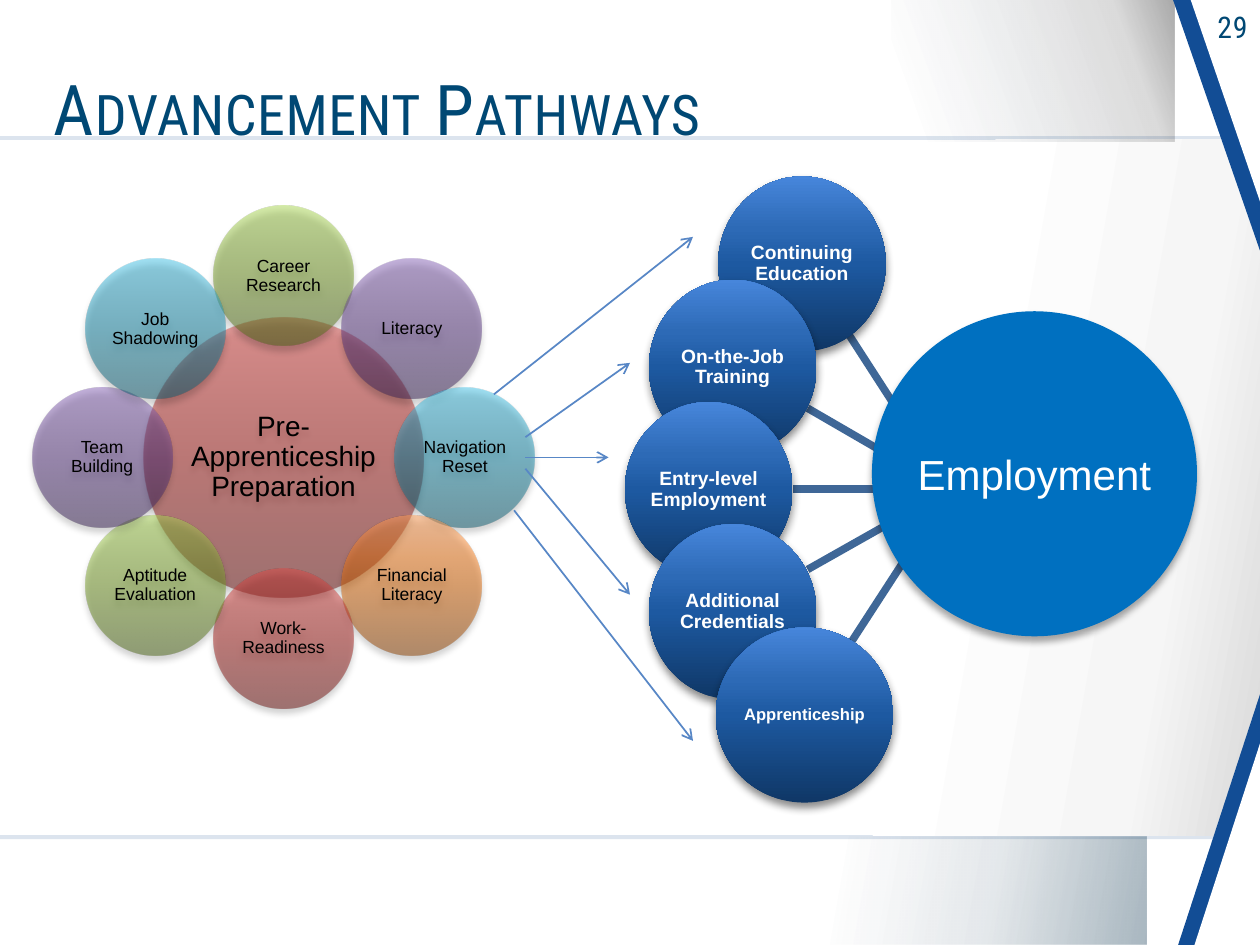
import math
from dataclasses import dataclass

import pptx
import pptx.dml.color
import pptx.enum.shapes
import pptx.enum.text
import pptx.oxml.ns
import pptx.util
from lxml import etree

Inches = pptx.util.Inches
Pt = pptx.util.Pt
qn = pptx.oxml.ns.qn
SHAPES = pptx.enum.shapes.MSO_SHAPE
ALIGN = pptx.enum.text.PP_ALIGN
ANCHOR = pptx.enum.text.MSO_ANCHOR

COLOURS = {
    "navy": "004874", "edge": "124D95", "rule": "275A99", "white": "FFFFFF",
    "black": "000000", "pale": "F6F6F6", "grey": "D9D9D9", "deep": "002C47",
    "spoke": "3F6797", "arrow": "5887C6", "employment": "0070C0",
}
RAMPS = {
    "red": ("68100E", "A41E1A", "B92E2A", "DF4845"),
    "green": ("4A6316", "769C27", "89B137", "A9D651"),
    "purple": ("372152", "593782", "6A4895", "8763B7"),
    "teal": ("0B586C", "178BAA", "279FC0", "41C1E6"),
    "orange": ("8B3F00", "DA6606", "F47917", "FF9C54"),
    "blue": ("0F3766", "1D59A1", "2D6AB6", "4786DB"),
}
RAMP_POSITIONS = (0, 50, 70, 100)


@dataclass
class Stop:
    position: float
    colour: str
    alpha: float = 100


@dataclass
class Box:
    left: float
    top: float
    width: float
    height: float

    def lengths(self) -> list:
        return [Inches(n) for n in (self.left, self.top, self.width, self.height)]


@dataclass
class Pathway:
    label: str
    box: Box
    spoke: tuple
    arrow: tuple
    size: float = 11


SATELLITES = [
    ("Career Research", "green"), ("Literacy", "purple"),
    ("Navigation Reset", "teal"), ("Financial Literacy", "orange"),
    ("Work-Readiness", "red"), ("Aptitude Evaluation", "green"),
    ("Team Building", "purple"), ("Job Shadowing", "teal"),
]
PATHWAYS = [
    Pathway("Continuing Education", Box(5.7, 1.4, 1.33, 1.39),
            (7.25, 3.45, 6.74, 2.66), (3.92, 3.13, 5.5, 1.88)),
    Pathway("On-the-Job Training", Box(5.15, 2.22, 1.33, 1.39),
            (7.1, 3.64, 6.41, 3.24), (4.17, 3.47, 5, 2.88)),
    Pathway("Entry-level Employment", Box(4.96, 3.19, 1.33, 1.39),
            (7.1, 3.88, 6.29, 3.88), (4.17, 3.63, 4.83, 3.63)),
    Pathway("Additional Credentials", Box(5.15, 4.16, 1.33, 1.39),
            (7.1, 4.13, 6.41, 4.52), (4.17, 3.72, 5, 4.72)),
    Pathway("Apprenticeship", Box(5.68, 4.98, 1.41, 1.39),
            (7.26, 4.32, 6.76, 5.09), (4.08, 4.05, 5.5, 5.88), 9.5),
]


def rgb(value: str):
    return pptx.dml.color.RGBColor.from_string(value)


def add_colour(parent, value: str, alpha: float) -> None:
    colour = etree.SubElement(parent, qn("a:srgbClr"), val=value)
    if alpha < 100:
        etree.SubElement(colour, qn("a:alpha"), val=str(round(alpha * 1000)))


def ramp(name: str, alpha: float = 100) -> list:
    return [Stop(place, colour, alpha) for place, colour in zip(RAMP_POSITIONS, RAMPS[name])]


def add_form(page, kind, box: Box, stops: list, angle: float = 270):
    form = page.shapes.add_shape(kind, *box.lengths())
    form.shadow.inherit = False
    form.line.fill.background()
    if len(stops) == 1:
        form.fill.solid()
        fill = form.element.spPr.find(qn("a:solidFill"))
        fill.clear()
        add_colour(fill, stops[0].colour, stops[0].alpha)
        return form
    form.fill.gradient()
    fill = form.element.spPr.find(qn("a:gradFill"))
    fill.clear()
    stop_list = etree.SubElement(fill, qn("a:gsLst"))
    for stop in stops:
        entry = etree.SubElement(stop_list, qn("a:gs"), pos=str(round(stop.position * 1000)))
        add_colour(entry, stop.colour, stop.alpha)
    etree.SubElement(fill, qn("a:lin"), ang=str(round(angle * 60000)), scaled="0")
    return form


def write(frame, text: str, *, size: float, colour: str, font: str = "Arial",
          bold: bool = False, align=ALIGN.CENTER, spacing: float = 0.9, inset: tuple = (0.01, 0.01),
          wrap: bool = True, anchor=ANCHOR.MIDDLE, small_caps: bool = False, tracking: int = 0) -> None:
    frame.word_wrap = wrap
    frame.vertical_anchor = anchor
    frame.margin_left = frame.margin_right = Inches(inset[0])
    frame.margin_top = frame.margin_bottom = Inches(inset[1])
    para = frame.paragraphs[0]
    para.alignment = align
    para.line_spacing = spacing
    span = para.add_run()
    span.text = text
    span.font.name = font
    span.font.size = Pt(size)
    span.font.bold = bold
    span.font.color.rgb = rgb(COLOURS[colour])
    properties = span.font._element
    if small_caps:
        properties.set("cap", "small")
    if tracking:
        properties.set("spc", str(tracking))


def add_circle(page, box: Box, stops: list, text: str, shade: tuple = (35, 4, 3), **style):
    circle = add_form(page, SHAPES.OVAL, box, stops)
    alpha, blur, distance = shade
    effects = circle.element.spPr.find(qn("a:effectLst"))
    shadow = etree.SubElement(effects, qn("a:outerShdw"), blurRad=str(Pt(blur)),
                              dist=str(Pt(distance)), dir="5400000", rotWithShape="0")
    add_colour(shadow, COLOURS["black"], alpha)
    write(circle.text_frame, text, **style)


def add_line(page, ends: tuple, colour: str, width: float, arrow: bool = False) -> None:
    line = page.shapes.add_connector(pptx.enum.shapes.MSO_CONNECTOR.STRAIGHT,
                                     *[Inches(n) for n in ends])
    line.line.color.rgb = rgb(COLOURS[colour])
    line.line.width = Pt(width)
    if arrow:
        etree.SubElement(line.element.spPr.find(qn("a:ln")), qn("a:tailEnd"), type="arrow")
    etree.SubElement(line.element.spPr, qn("a:effectLst"))


def add_text(page, box: Box, text: str, **style) -> None:
    frame = page.shapes.add_textbox(*box.lengths()).text_frame
    write(frame, text, font="Roboto Condensed", colour="navy", tracking=40,
          inset=(0.1, 0.05), **style)


def draw_backdrop(page) -> None:
    white, deep, black = COLOURS["white"], COLOURS["deep"], COLOURS["black"]
    add_form(page, SHAPES.RECTANGLE, Box(0, 1.08, 10, 5.58), [Stop(0, COLOURS["rule"], 16)])
    add_form(page, SHAPES.RECTANGLE, Box(0, 1.11, 10, 5.52),
             [Stop(0, white), Stop(72, white), Stop(90, COLOURS["pale"]),
              Stop(100, COLOURS["grey"])], 10)
    add_form(page, SHAPES.RECTANGLE, Box(6.43, 6.64, 2.67, 0.86),
             [Stop(10, deep, 0), Stop(56, deep, 11), Stop(100, deep, 34)], 10)
    add_form(page, SHAPES.RECTANGLE, Box(7.08, 0, 2.24, 1.12),
             [Stop(10, deep, 0), Stop(81, black, 14), Stop(100, black, 34)], 340)
    for box, colour, pointing_down in (
            (Box(9.31, 0, 0.69, 1.99), "edge", True), (Box(9.45, 0, 0.55, 1.6), "white", True),
            (Box(9.35, 5.51, 0.65, 1.99), "edge", False), (Box(9.48, 5.9, 0.52, 1.6), "white", False)):
        corner = add_form(page, SHAPES.ISOSCELES_TRIANGLE, box, [Stop(0, COLOURS[colour])])
        corner.adjustments[0] = 1
        if pointing_down:
            corner.element.spPr.find(qn("a:xfrm")).set("flipV", "1")


def draw_preparation(page) -> None:
    centre_x, centre_y, radius, size = 2.25, 3.63, 1.44, 1.11
    add_circle(page, Box(1.14, 2.52, 2.22, 2.22), ramp("red", 50),
               "Pre-Apprenticeship Preparation", size=16, colour="black", inset=(0.02, 0.02))
    for index, (label, colour) in enumerate(SATELLITES):
        turn = math.tau * index / len(SATELLITES)
        box = Box(centre_x + radius * math.sin(turn) - size / 2,
                  centre_y - radius * math.cos(turn) - size / 2, size, size)
        add_circle(page, box, ramp(colour, 50), label, size=10, colour="black")


def draw_pathways(page) -> None:
    for pathway in reversed(PATHWAYS):
        add_line(page, pathway.spoke, "spoke", 4.33)
    for pathway in PATHWAYS:
        add_circle(page, pathway.box, ramp("blue"), pathway.label, shade=(45, 5, 3),
                   size=pathway.size, colour="white", bold=True)
    add_circle(page, Box(6.92, 2.47, 2.58, 2.58), [Stop(0, COLOURS["employment"])],
               "Employment", size=24, colour="white", spacing=1.0, wrap=False)
    for pathway in PATHWAYS:
        add_line(page, pathway.arrow, "arrow", 1, arrow=True)


def main() -> None:
    deck = pptx.Presentation()
    deck.slide_width, deck.slide_height = Inches(10), Inches(7.5)
    page = deck.slides.add_slide(deck.slide_layouts[6])
    draw_backdrop(page)
    add_text(page, Box(9.2, 0.02, 0.8, 0.39), "29", size=17, align=ALIGN.RIGHT,
             spacing=1.0, anchor=ANCHOR.TOP)
    draw_preparation(page)
    add_text(page, Box(0.33, 0.17, 6.92, 1.47), "Advancement Pathways", size=40,
             align=ALIGN.LEFT, spacing=0.85, small_caps=True)
    draw_pathways(page)
    deck.save("out.pptx")


if __name__ == "__main__":
    main()
